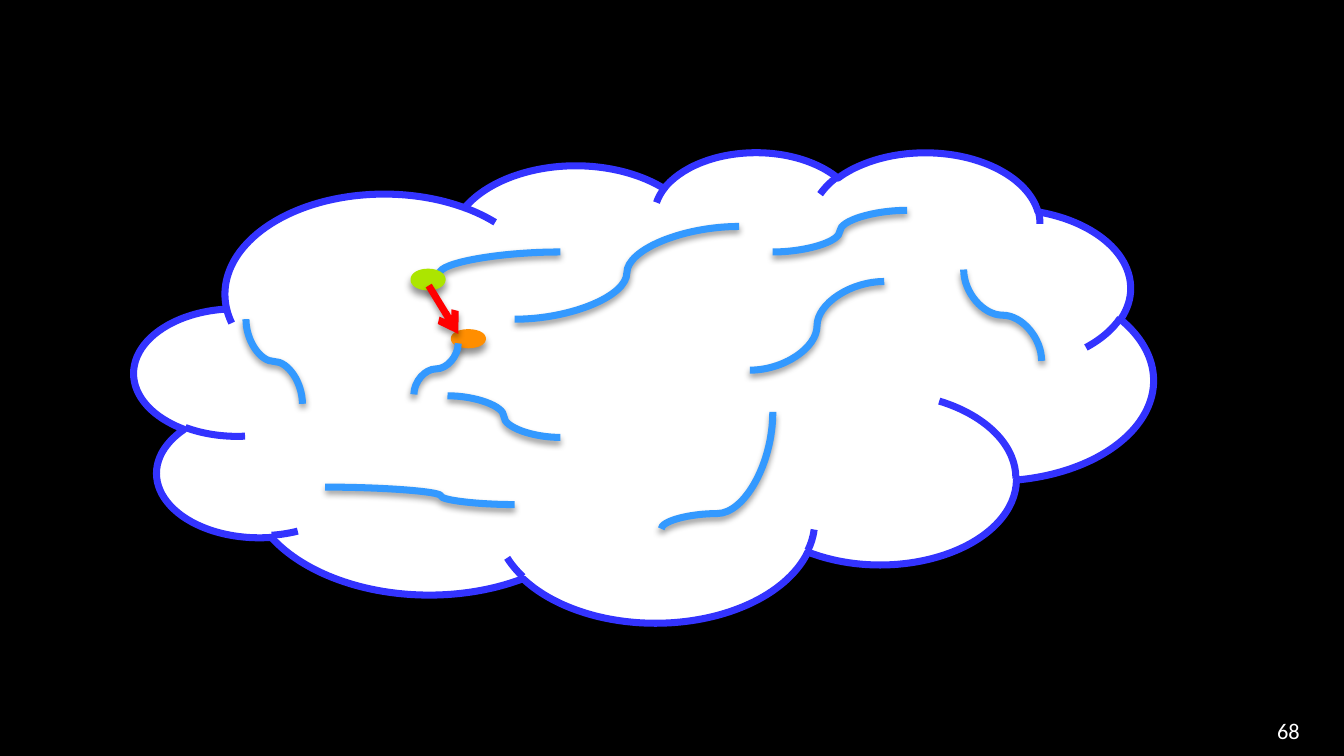
from lxml.etree import SubElement
from pptx import Presentation
from pptx.dml.color import RGBColor
from pptx.enum.shapes import MSO_CONNECTOR as Connector, MSO_SHAPE as Shape
from pptx.enum.text import MSO_ANCHOR, PP_ALIGN
from pptx.oxml.ns import qn
from pptx.util import Inches, Pt

BLUE, LINE_WIDTH = "3399FF", 3.78

# start, end, leaves vertically, bend position; relative to the cloud's corner
PATHS = [
    ((0.83, 1.25), (1.25, 1.88), True, 0.5),
    ((2.33, 1.82), (3.17, 2.13), False, 0.5),
    ((5.75, 0.44), (4.75, 0.75), False, 0.5),
    ((4.5, 0.56), (2.83, 1.25), False, 0.5),
    ((5.58, 0.97), (4.58, 1.63), False, 0.5),
    ((2.83, 2.63), (1.42, 2.5), False, 0.39),
    ((4.75, 1.94), (3.92, 2.81), True, 0.87),
    ((6.17, 0.88), (6.75, 1.56), True, 0.5),
]


def color(value):
    return RGBColor.from_string(value)


def style_line(line, value):
    line.color.rgb = color(value)
    line.width = Pt(LINE_WIDTH)


def add_shadow(item, opacity, blur, distance):
    """Downward black shadow; opacity in percent, lengths in points."""
    effects = SubElement(item.element.spPr, qn("a:effectLst"))
    outer = SubElement(effects, qn("a:outerShdw"), blurRad=str(Pt(blur)),
                       dist=str(Pt(distance)), dir="5400000", rotWithShape="0")
    black = SubElement(outer, qn("a:srgbClr"), val="000000")
    SubElement(black, qn("a:alpha"), val=str(opacity * 1000))


def add_link(slide, kind, start, end, value):
    link = slide.shapes.add_connector(kind, *map(Inches, (*start, *end)))
    style_line(link.line, value)
    add_shadow(link, 38, 3.5, 2)
    return link


def add_curve(slide, start, end, vertical=False, bend=0.5):
    """S-curve; a vertical one is a horizontal one turned by 90 degrees."""
    if vertical:
        mid_x, mid_y = (start[0] + end[0]) / 2, (start[1] + end[1]) / 2
        half_x, half_y = (end[0] - start[0]) / 2, (end[1] - start[1]) / 2
        start = (mid_x - half_y, mid_y + half_x)
        end = (mid_x + half_y, mid_y - half_x)
    curve = add_link(slide, Connector.CURVE, start, end, BLUE)
    properties = curve.element.spPr
    if vertical:
        properties.find(qn("a:xfrm")).set("rot", "5400000")
    guides = properties.find(qn("a:prstGeom")).find(qn("a:avLst"))
    SubElement(guides, qn("a:gd"), name="adj1", fmla=f"val {round(bend * 100000)}")
    return curve


def add_quarter_curve(slide, start, end):
    curve = add_curve(slide, start, end)
    geometry = curve.element.spPr.find(qn("a:prstGeom"))
    geometry.set("prst", "curvedConnector2")
    guides = geometry.find(qn("a:avLst"))
    guides.remove(guides[0])


def add_filled(slide, kind, box, fill, outline):
    filled = slide.shapes.add_shape(kind, *map(Inches, box))
    filled.fill.solid()
    filled.fill.fore_color.rgb = color(fill)
    style_line(filled.line, outline)
    return filled


def add_node(slide, box, value):
    node = add_filled(slide, Shape.OVAL, box, value, value)
    add_shadow(node, 43, 4, 3)


def add_cloud(slide, left, top, width, height):
    def at(point):
        return left + point[0], top + point[1]

    cloud = add_filled(slide, Shape.CLOUD, (left, top, width, height), "FFFFFF", "3333FF")
    cloud.shadow.inherit = False
    for start, end, vertical, bend in PATHS:
        add_curve(slide, at(start), at(end), vertical, bend)
    add_quarter_curve(slide, at((3.17, 0.75)), at((2.27, 0.91)))
    add_node(slide, (*at((2.08, 0.9)), 0.21, 0.11), "ACE500")
    add_node(slide, (*at((2.38, 1.35)), 0.21, 0.09), "FF8E00")
    jump = add_link(slide, Connector.STRAIGHT, at((2.19, 1)), at((2.41, 1.36)), "FF0000")
    SubElement(jump.element.spPr.find(qn("a:ln")), qn("a:tailEnd"), type="arrow")
    add_curve(slide, at((2.08, 1.81)), at((2.41, 1.43)), vertical=True)


def add_page_number(slide, left, top, width, height):
    number = slide.shapes.add_textbox(*map(Inches, (left, top, width, height)))
    frame = number.text_frame
    frame.word_wrap = True
    frame.vertical_anchor = MSO_ANCHOR.BOTTOM
    frame.margin_bottom = 0
    frame.text = "68"
    paragraph = frame.paragraphs[0]
    paragraph.alignment = PP_ALIGN.RIGHT
    font = paragraph.runs[0].font
    font.name, font.size = "Calibri", Pt(12)
    font.color.rgb = color("FFFFFF")


def main():
    deck = Presentation()
    deck.slide_width = Inches(10)
    deck.slide_height = deck.slide_width * 9 // 16
    slide = deck.slides.add_slide(deck.slide_layouts[6])
    slide.background.fill.solid()
    slide.background.fill.fore_color.rgb = color("000000")
    add_page_number(slide, 8.97, 5.31, 0.8, 0.23)
    add_cloud(slide, 1, 9 / 8, 7.58, 3.5)
    deck.save("out.pptx")


if __name__ == "__main__":
    main()
